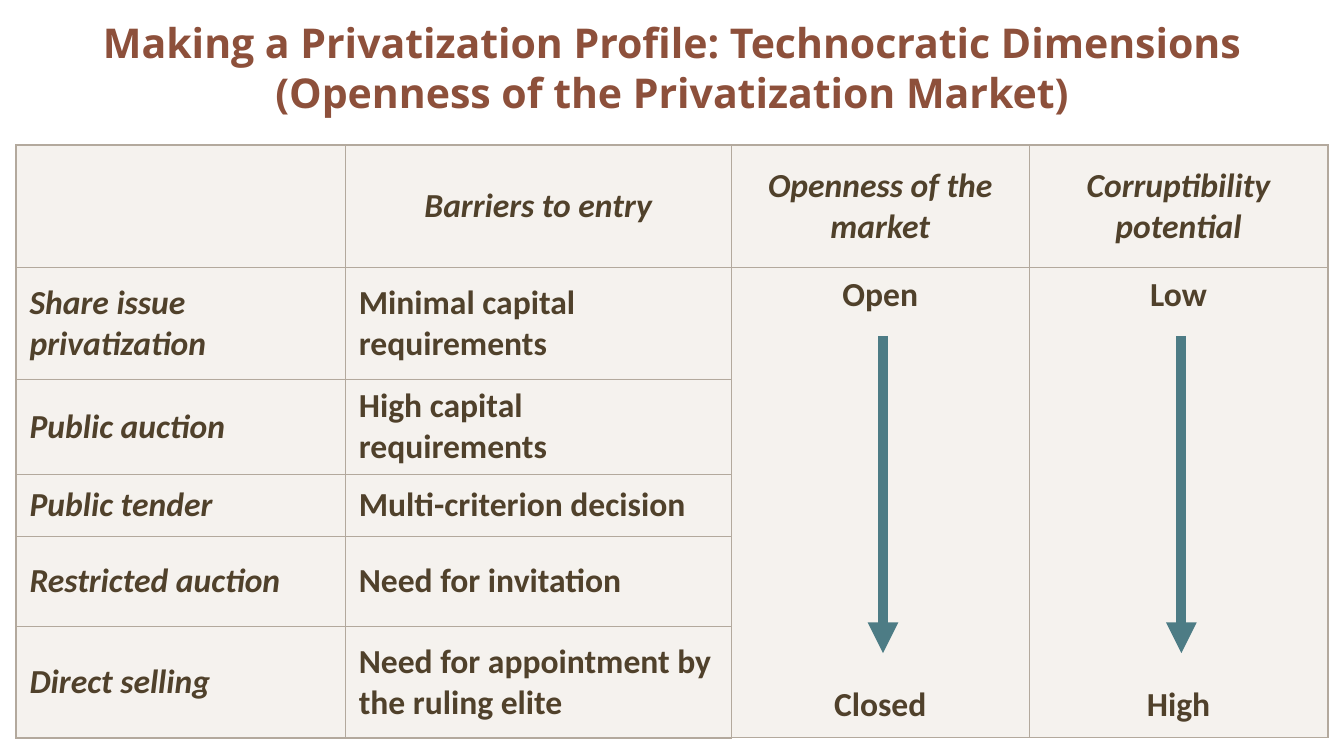
from lxml import etree
from pptx import Presentation
from pptx.dml.color import RGBColor
from pptx.enum.shapes import MSO_CONNECTOR
from pptx.enum.text import MSO_ANCHOR, MSO_AUTO_SIZE, PP_ALIGN
from pptx.oxml.ns import qn
from pptx.util import Inches, Pt

CENTER, LEFT = PP_ALIGN.CENTER, PP_ALIGN.LEFT
MIDDLE, TOP = MSO_ANCHOR.MIDDLE, MSO_ANCHOR.TOP
STRAIGHT = MSO_CONNECTOR.STRAIGHT

THEME = {
    "title": {"name": "Open Sans", "size": Pt(22), "bold": True, "color": "8D503B"},
    "label": {"name": "Calibri", "size": Pt(18), "bold": True, "italic": True, "color": "50412B"},
    "entry": {"name": "Calibri", "size": Pt(18), "bold": True, "italic": False, "color": "50412B"},
    "cell": "EFEAE4",
    "cell_alpha": 60,
    "border": "B3A99D",
    "inner": 0.5,
    "outer": 1,
    "arrow": "4D7C85",
    "arrow_width": 5.5,
}

MARGIN, TABLE_TOP = 0.12, 1.08
COLUMNS = [2.45, 2.87, 2.22, 2.22]
ROWS = [0.91, 0.83, 0.71, 0.46, 0.67, 0.83]
ARROW_TOP, ARROW_BOTTOM, ARROW_SHIFT = 2.5, 4.86, 0.02

TITLE = "Making a Privatization Profile: Technocratic Dimensions (Openness of the Privatization Market)"
CONTENT = [
    ["", "Barriers to entry", "Openness of the market", "Corruptibility potential"],
    ["Share issue privatization", "Minimal capital requirements"],
    ["Public auction", "High capital requirements"],
    ["Public tender", "Multi-criterion decision"],
    ["Restricted auction", "Need for invitation"],
    ["Direct selling", "Need for appointment by the ruling elite"],
]
SCALES = {2: ["Open", "Closed"], 3: ["Low", "High"]}
SCALE_GAP = Pt(198)


def write(paragraph, text, style, align):
    paragraph.text = text
    paragraph.alignment = align
    for key, value in THEME[style].items():
        if key == "color":
            paragraph.font.color.rgb = RGBColor.from_string(value)
        else:
            setattr(paragraph.font, key, value)


def paint_cell(cell, widths):
    """Give a cell its translucent fill and its left, right, top and bottom borders."""
    cell.fill.solid()
    cell.fill.fore_color.rgb = RGBColor.from_string(THEME["cell"])
    properties = cell._tc.tcPr
    tint = properties.find(".//" + qn("a:srgbClr"))
    etree.SubElement(tint, qn("a:alpha"), val=str(THEME["cell_alpha"] * 1000))
    for position, (side, width) in enumerate(zip("LRTB", widths)):
        border = etree.Element(qn("a:ln" + side), w=str(Pt(width)))
        fill = etree.SubElement(border, qn("a:solidFill"))
        etree.SubElement(fill, qn("a:srgbClr"), val=THEME["border"])
        properties.insert(position, border)


deck = Presentation()
deck.slide_width = Inches(10)
deck.slide_height = deck.slide_width * 9 // 16
slide = deck.slides.add_slide(deck.slide_layouts[5])

title = slide.shapes.title
title.left, title.top = Inches(MARGIN), 0
title.width, title.height = Inches(sum(COLUMNS)), Inches(1)
title.text_frame.word_wrap = True
title.text_frame.auto_size = MSO_AUTO_SIZE.NONE
title.text_frame.vertical_anchor = MIDDLE
write(title.text_frame.paragraphs[0], TITLE, "title", CENTER)

profile = slide.shapes.add_table(
    len(ROWS), len(COLUMNS), Inches(MARGIN), Inches(TABLE_TOP),
    Inches(sum(COLUMNS)), Inches(sum(ROWS))).table
profile.first_row = profile.horz_banding = False
for column, width in zip(profile.columns, COLUMNS):
    column.width = Inches(width)
for row, height in zip(profile.rows, ROWS):
    row.height = Inches(height)

last_row, last_column = len(ROWS) - 1, len(COLUMNS) - 1
for r in range(len(ROWS)):
    for c in range(len(COLUMNS)):
        edges = [c == 0, c == last_column, r == 0, r == last_row]
        paint_cell(profile.cell(r, c),
                   [THEME["outer" if edge else "inner"] for edge in edges])

for r, entries in enumerate(CONTENT):
    for c, entry in enumerate(entries):
        cell = profile.cell(r, c)
        cell.vertical_anchor = MIDDLE
        write(cell.text_frame.paragraphs[0], entry,
              "label" if r == 0 or c == 0 else "entry", CENTER if r == 0 else LEFT)

for c, (start, end) in SCALES.items():
    scale = profile.cell(1, c)
    scale.merge(profile.cell(last_row, c))
    scale.vertical_anchor = TOP
    write(scale.text_frame.paragraphs[0], start, "entry", CENTER)
    end_paragraph = scale.text_frame.add_paragraph()
    write(end_paragraph, end, "entry", CENTER)
    end_paragraph.space_before = SCALE_GAP

    x = Inches(MARGIN + sum(COLUMNS[:c]) + COLUMNS[c] / 2 + ARROW_SHIFT)
    arrow = slide.shapes.add_connector(STRAIGHT, x, Inches(ARROW_TOP), x, Inches(ARROW_BOTTOM))
    arrow.line.color.rgb = RGBColor.from_string(THEME["arrow"])
    arrow.line.width = Pt(THEME["arrow_width"])
    etree.SubElement(arrow.line._get_or_add_ln(), qn("a:tailEnd"), type="triangle")
    etree.SubElement(arrow._element.spPr, qn("a:effectLst"))

deck.save("out.pptx")
